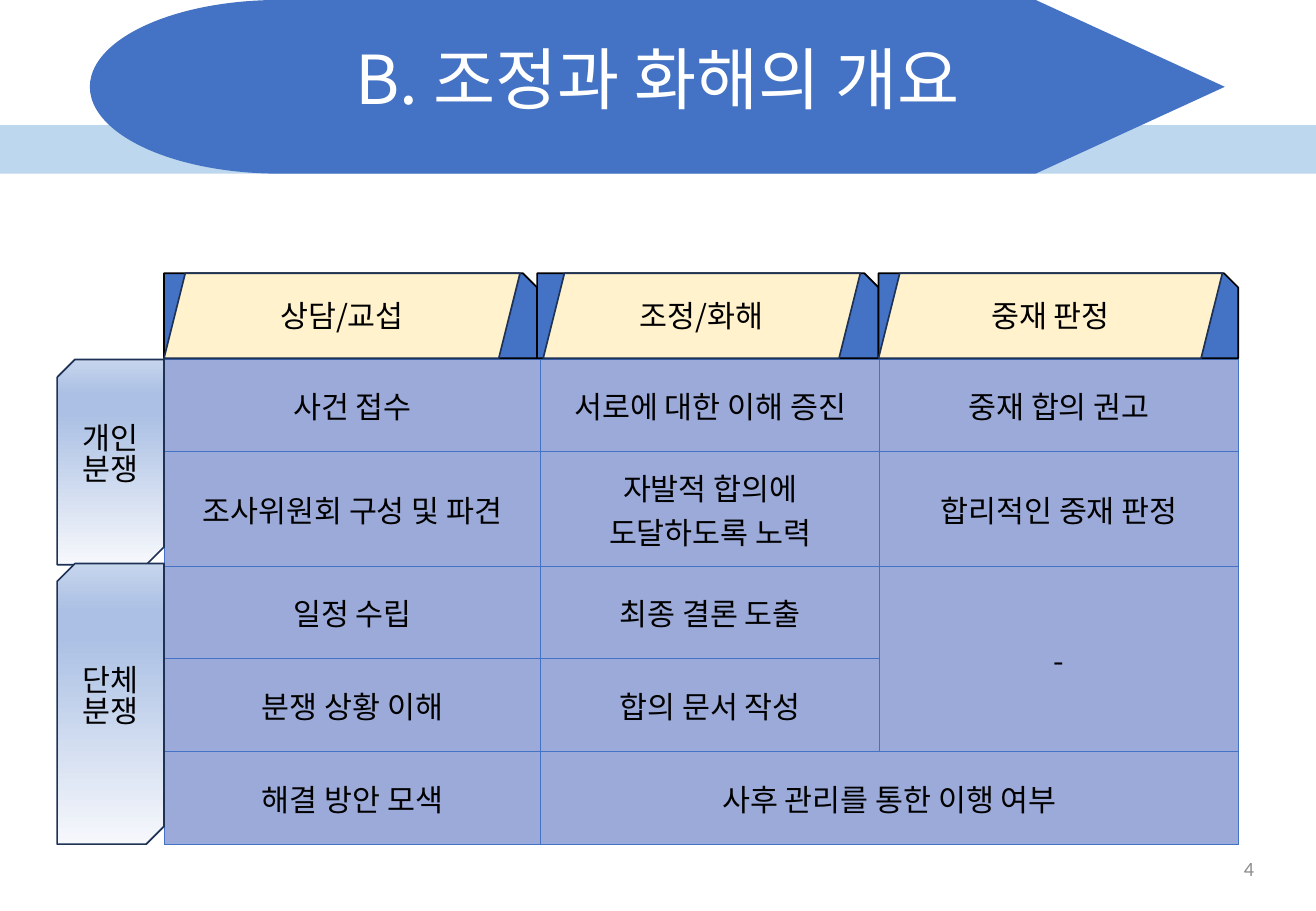
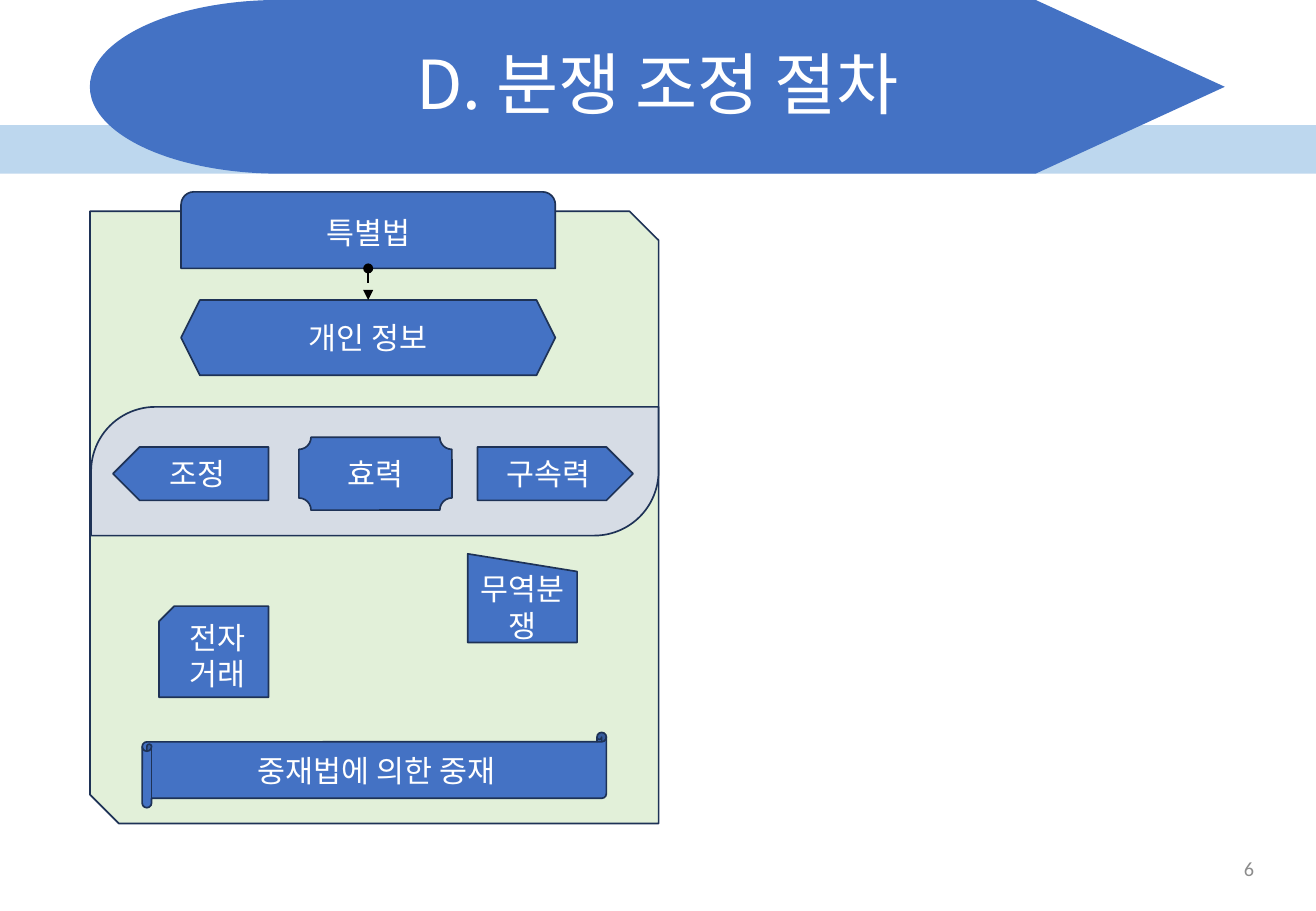
from pptx import Presentation
from pptx.dml.color import RGBColor
from pptx.enum import dml, shapes, text
from pptx.oxml import parse_xml
from pptx.oxml.ns import nsdecls, qn
from pptx.util import Inches, Pt

COLORS = {
    "blue": "4472C4", "band": "BDD7EE", "outline": "1E3256", "black": "000000",
    "white": "FFFFFF", "cream": "FFF2CC", "cell": "9BAAD9", "green": "E2F0D9",
    "gray": "D6DCE5", "number": "8C8C8C",
}
RGB = {name: RGBColor.from_string(code) for name, code in COLORS.items()}
KOREAN, LATIN = "Noto Sans CJK KR", "Calibri"
KIND = shapes.MSO_SHAPE


def write(frame, words, size=18, font=LATIN, color="white",
          align=text.PP_ALIGN.CENTER, anchor=text.MSO_ANCHOR.MIDDLE, spacing=None):
    frame.word_wrap = True
    frame.vertical_anchor = anchor
    paragraph = frame.paragraphs[0]
    paragraph.alignment = align
    paragraph.line_spacing = spacing
    run = paragraph.add_run()
    run.text = words
    run.font.size = Pt(size)
    run.font.name = font
    run.font.color.rgb = RGB[color]
    east_asian = parse_xml(f'<a:ea {nsdecls("a")} typeface="{font}"/>')
    run.font._element.find(qn("a:latin")).addnext(east_asian)


def draw(slide, kind, box, fill="blue", line="outline", flip=None, adjust=()):
    shape = slide.shapes.add_shape(kind, *map(Inches, box))
    shape.shadow.inherit = False
    shape.fill.solid()
    shape.fill.fore_color.rgb = RGB[fill]
    if line:
        shape.line.color.rgb = RGB[line]
        shape.line.width = Pt(1)
    else:
        shape.line.fill.background()
    if flip:
        shape.element.spPr.find(qn("a:xfrm")).set(flip, "1")
    for index, value in enumerate(adjust):
        shape.adjustments[index] = value
    return shape


prs = Presentation()
prs.slide_width, prs.slide_height = Inches(10.83), Inches(7.5)
layout = prs.slide_layouts[5]

# Titles and page numbers
slides = []
for heading, title_height, number in [("B. 조정과 화해의 개요", 1.03, "4"),
                                      ("D. 분쟁 조정 절차", 1.07, "6")]:
    slide = prs.slides.add_slide(layout)
    title = slide.shapes.title
    title.left, title.top = Inches(0.74), Inches(0)
    title.width, title.height = Inches(9.34), Inches(title_height)
    title.text_frame.auto_size = text.MSO_AUTO_SIZE.NONE
    write(title.text_frame, heading, 40, KOREAN,
          anchor=text.MSO_ANCHOR.BOTTOM, spacing=0.9)
    page = slide.shapes.add_textbox(*map(Inches, (7.98, 6.95, 2.44, 0.4)))
    write(page.text_frame, number, 12, color="number", align=text.PP_ALIGN.RIGHT)
    slides.append(slide)
overview, procedure = slides

# Title band, moved to the shared layout
band = draw(overview, KIND.RECTANGLE, (0, 1.03, 10.83, 0.4), "band", None)
banner = draw(overview, KIND.FLOWCHART_DISPLAY, (0.74, 0, 9.34, 1.43),
              line=None, flip="flipH")
for position, part in enumerate((band, banner), start=2):
    layout.shapes.element.insert(position, part.element)

# Overview table
rows = [
    ["사건 접수", "서로에 대한 이해 증진", "중재 합의 권고"],
    ["조사위원회 구성 및 파견", "자발적 합의에 도달하도록 노력", "합리적인 중재 판정"],
    ["일정 수립", "최종 결론 도출", "-"],
    ["분쟁 상황 이해", "합의 문서 작성", ""],
    ["해결 방안 모색", "사후 관리를 통한 이행 여부", ""],
]
table = overview.shapes.add_table(
    5, 3, *map(Inches, (1.35, 2.96, 8.84, 4))).table
table.first_row = table.horz_banding = False
for column, width in zip(table.columns, (3.1, 2.79, 2.95)):
    column.width = Inches(width)
for row, height in zip(table.rows, (0.76, 0.94, 0.76, 0.77, 0.76)):
    row.height = Inches(height)
table.cell(2, 2).merge(table.cell(3, 2))
table.cell(4, 1).merge(table.cell(4, 2))
for r, row in enumerate(rows):
    for c, words in enumerate(row):
        cell = table.cell(r, c)
        cell_properties = cell._tc.get_or_add_tcPr()
        for side in ("lnL", "lnR", "lnT", "lnB"):
            cell_properties.append(parse_xml(
                f'<a:{side} {nsdecls("a")} w="6350"><a:solidFill>'
                f'<a:srgbClr val="{COLORS["blue"]}"/></a:solidFill></a:{side}>'))
        cell.fill.solid()
        cell.fill.fore_color.rgb = RGB["cell"]
        cell.vertical_anchor = text.MSO_ANCHOR.MIDDLE
        if words:
            write(cell.text_frame, words, font=KOREAN, color="black")

# Column headings
headings = [("상담/교섭", 1.35, 3.07, 1.35, 2.93),
            ("조정/화해", 4.42, 2.81, 4.47, 2.61),
            ("중재 판정", 7.23, 2.96, 7.23, 2.83)]
for words, left, width, label_left, label_width in headings:
    draw(overview, KIND.SNIP_1_RECTANGLE, (left, 2.25, width, 0.7), line="black")
    label = draw(overview, KIND.PARALLELOGRAM,
                 (label_left, 2.25, label_width, 0.7), "cream")
    write(label.text_frame, words, font=KOREAN, color="black")

# Row group labels
stops = "".join(
    f'<a:gs pos="{percent * 1000}"><a:srgbClr val="{code}"/></a:gs>'
    for percent, code in [(0, "F6F8FC"), (74, "ABC0E4"), (83, "ABC0E4"), (100, "C7D5ED")])
for words, top, height, label_top in [("개인분쟁", 2.96, 1.69, 3.45),
                                      ("단체분쟁", 4.64, 2.31, 5.44)]:
    group = draw(overview, KIND.SNIP_2_DIAG_RECTANGLE, (0.47, top, 0.88, height),
                 flip="flipV")
    solid = group.element.spPr.find(qn("a:solidFill"))
    solid.addprevious(parse_xml(
        f'<a:gradFill {nsdecls("a")} rotWithShape="1"><a:gsLst>{stops}</a:gsLst>'
        '<a:lin ang="5400000" scaled="0"/></a:gradFill>'))
    group.element.spPr.remove(solid)
    label = overview.shapes.add_textbox(*map(Inches, (0.47, label_top, 0.88, 0.71)))
    write(label.text_frame, words, font=KOREAN, color="black",
          anchor=text.MSO_ANCHOR.TOP, spacing=0.85)

# Procedure panels
draw(procedure, KIND.SNIP_2_DIAG_RECTANGLE, (0.74, 1.74, 4.68, 5.04), "green",
     adjust=(0, 0.051))
draw(procedure, KIND.ROUND_2_DIAG_RECTANGLE, (0.75, 3.35, 4.67, 1.06), "gray",
     adjust=(0.5, 0))

# Procedure steps
steps = [
    ("특별법", KIND.ROUND_2_SAME_RECTANGLE, (1.49, 1.58, 3.08, 0.63), None),
    ("개인 정보", KIND.HEXAGON, (1.49, 2.47, 3.08, 0.62), None),
    ("조정", KIND.PENTAGON, (0.93, 3.68, 1.28, 0.44), "flipH"),
    ("구속력", KIND.PENTAGON, (3.93, 3.68, 1.28, 0.44), None),
    ("효력", KIND.PLAQUE, (2.46, 3.6, 1.26, 0.6), None),
    ("중재법에 의한 중재", KIND.HORIZONTAL_SCROLL, (1.17, 6.03, 3.82, 0.62), None),
    ("전자거래", KIND.SNIP_1_RECTANGLE, (1.31, 4.99, 0.9, 0.75), "flipH"),
    ("무역분쟁", KIND.FLOWCHART_MANUAL_INPUT, (3.85, 4.56, 0.9, 0.73), "flipH"),
]
for words, kind, box, flip in steps:
    write(draw(procedure, kind, box, flip=flip).text_frame, words)

# Arrow from the special law to personal information
arrow = procedure.shapes.add_connector(
    shapes.MSO_CONNECTOR.STRAIGHT, *map(Inches, (3.03, 2.21, 3.03, 2.47)))
arrow.line.color.rgb = RGB["black"]
arrow.line.width = Pt(1.5)
arrow.line.dash_style = dml.MSO_LINE.DASH
for end, head in (("headEnd", "oval"), ("tailEnd", "triangle")):
    arrow.line._get_or_add_ln().append(
        parse_xml(f'<a:{end} {nsdecls("a")} type="{head}"/>'))
arrow.element.spPr.append(parse_xml(f'<a:effectLst {nsdecls("a")}/>'))

prs.save("out.pptx")
